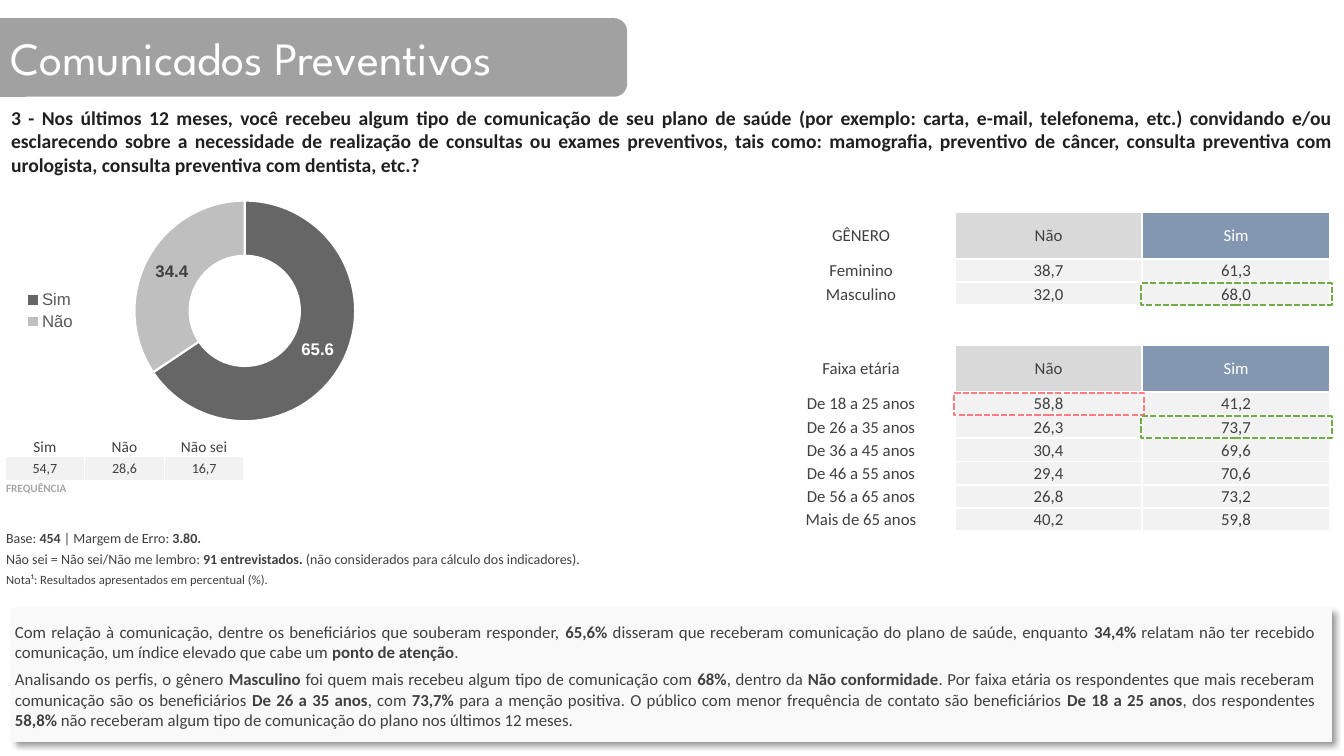
from itertools import accumulate
from lxml import etree
from pptx import Presentation
from pptx.chart.data import CategoryChartData
from pptx.dml.color import RGBColor
from pptx.enum.chart import XL_CHART_TYPE as ChartType, XL_LEGEND_POSITION as LegendPosition
from pptx.enum.dml import MSO_LINE as Dash
from pptx.enum.shapes import MSO_SHAPE as Shape
from pptx.enum.text import MSO_ANCHOR as Anchor, MSO_AUTO_SIZE as AutoSize, PP_ALIGN as Align
from pptx.oxml import parse_xml
from pptx.oxml.ns import nsdecls, qn
from pptx.util import Inches, Pt

WIDTH, HEIGHT = 13.33, 7.5
INK, WHITE, PALE, GREEN, RED = "404040", "FFFFFF", "F2F2F2", "70AD47", "FF7C80"
TITLE = "Comunicados Preventivos"
QUESTION = (
    "**3 - Nos últimos 12 meses, você recebeu algum tipo de comunicação de seu plano de saúde "
    "(por exemplo: carta, e-mail, telefonema, etc.) convidando e/ou esclarecendo sobre a necessidade "
    "de realização de consultas ou exames preventivos, tais como: mamografia, preventivo de câncer, "
    "consulta preventiva com urologista, consulta preventiva com dentista, etc.?**"
)
ANSWERS = [("Sim", 65.6, "666666", WHITE), ("Não", 34.4, "BFBFBF", INK)]
FREQUENCY = [["Sim", "Não", "Não sei"], ["54,7", "28,6", "16,7"], ["**FREQUÊNCIA**"]]
NOTES = [
    ["Base: **454** | Margem de Erro: **3.80.**"],
    ["Não sei = Não sei/Não me lembro: **91 entrevistados.** (não considerados para cálculo dos indicadores)."],
    ["Nota¹: Resultados apresentados em percentual (%)."],
]
PROFILES = [
    ["GÊNERO", "Não", "Sim"],
    ["Feminino", "38,7", "61,3"],
    ["Masculino", "32,0", "68,0"],
    [""],
    ["Faixa etária", "Não", "Sim"],
    ["De 18 a 25 anos", "58,8", "41,2"],
    ["De 26 a 35 anos", "26,3", "73,7"],
    ["De 36 a 45 anos", "30,4", "69,6"],
    ["De 46 a 55 anos", "29,4", "70,6"],
    ["De 56 a 65 anos", "26,8", "73,2"],
    ["Mais de 65 anos", "40,2", "59,8"],
]
HIGHLIGHTS = [(2, 2, GREEN), (5, 1, RED), (6, 2, GREEN)]
ANALYSIS = [
    "Com relação à comunicação, dentre os beneficiários que souberam responder, **65,6%** disseram que "
    "receberam comunicação do plano de saúde, enquanto **34,4%** relatam não ter recebido comunicação, "
    "um índice elevado que cabe um **ponto de atenção**.",
    "Analisando os perfis, o gênero **Masculino **foi quem mais recebeu algum tipo de comunicação com "
    "**68%**, dentro da **Não conformidade**. Por faixa etária os respondentes que mais receberam "
    "comunicação são os beneficiários **De 26 a 35 anos**, com **73,7% **para a menção positiva. "
    "O público com menor frequência de contato são beneficiários **De 18 a 25 anos**, dos respondentes "
    "**58,8% **não receberam algum tipo de comunicação do plano nos últimos 12 meses.",
]

deck = Presentation()
deck.slide_width, deck.slide_height = Inches(WIDTH), Inches(HEIGHT)
slide = deck.slides.add_slide(deck.slide_layouts[5])
shapes = slide.shapes


def rgb(code):
    return RGBColor.from_string(code)


def box(*lengths):
    return [Inches(length) for length in lengths]


def style(font, size, color, bold=False, face="Calibri"):
    font.size, font.bold, font.name = Pt(size), bold, face
    font.color.rgb = rgb(color)


def write(paragraph, marked, size, color=INK, align=Align.LEFT):
    paragraph.alignment = align
    for index, piece in enumerate(marked.split("**")):
        if piece:
            run = paragraph.add_run()
            run.text = piece
            style(run.font, size, color, index % 2 == 1)


def add_panel(kind, place, fill=None, line=None):
    panel = shapes.add_shape(kind, *box(*place))
    panel.shadow.inherit = False
    if fill:
        panel.fill.solid()
        panel.fill.fore_color.rgb = rgb(fill)
    else:
        panel.fill.background()
    if line:
        panel.line.color.rgb = rgb(line)
        panel.line.width, panel.line.dash_style = Pt(1.5), Dash.SQUARE_DOT
    else:
        panel.line.fill.background()
    return panel


def add_text(place, paragraphs, size, color, insets=(0.1, 0.05)):
    frame = shapes.add_textbox(*box(*place)).text_frame
    frame.word_wrap = True
    frame.margin_left = frame.margin_right = Inches(insets[0])
    frame.margin_top = frame.margin_bottom = Inches(insets[1])
    for index, marked in enumerate(paragraphs):
        paragraph = frame.add_paragraph() if index else frame.paragraphs[0]
        if index:
            paragraph.space_before = Pt(5)
        write(paragraph, marked, size, color, Align.JUSTIFY)


def add_grid(left, top, column, heights, rows, look, border):
    columns = max(map(len, rows))
    table = shapes.add_table(len(rows), columns, *box(left, top, column * columns, sum(heights))).table
    table.first_row = table.horz_banding = False
    for col in table.columns:
        col.width = Inches(column)
    for r, (height, texts) in enumerate(zip(heights, rows)):
        table.rows[r].height = Inches(height)
        for c in range(columns):
            cell = table.cell(r, c)
            size, color, fill, align, anchor = look(r, c)
            cell.margin_left = cell.margin_right = cell.margin_top = Inches(0.01)
            cell.margin_bottom = 0
            cell.vertical_anchor = anchor
            properties = cell._tc.get_or_add_tcPr()
            for side in ("a:lnL", "a:lnR", "a:lnT", "a:lnB"):
                edge = etree.SubElement(properties, qn(side), w=str(Pt(border)))
                paint = etree.SubElement(edge, qn("a:solidFill"))
                etree.SubElement(paint, qn("a:srgbClr"), val=WHITE)
            if fill:
                cell.fill.solid()
                cell.fill.fore_color.rgb = rgb(fill)
            else:
                cell.fill.background()
            if c < len(texts):
                write(cell.text_frame.paragraphs[0], texts[c], size, color, align)
        if len(texts) < columns:
            table.cell(r, 0).merge(table.cell(r, columns - 1))


def frequency_look(r, c):
    return [
        (11, INK, None, Align.CENTER, Anchor.BOTTOM),
        (10, INK, PALE, Align.CENTER, Anchor.MIDDLE),
        (8, "A6A6A6", None, Align.LEFT, Anchor.TOP),
    ][r]


def notes_look(r, c):
    return 9 if r == 2 else 10, INK, None, Align.LEFT, Anchor.TOP


def profiles_look(r, c):
    heading = PROFILES[r][-1] == "Sim"
    fill = (None, "D9D9D9", "8497B0")[c] if heading else PALE if c and PROFILES[r][0] else None
    return 12, WHITE if heading and c == 2 else INK, fill, Align.CENTER, Anchor.MIDDLE


def add_answers_chart(place):
    data = CategoryChartData(number_format="0.0")
    data.categories = [answer for answer, *_ in ANSWERS]
    data.add_series("Series 1", [share for _, share, *_ in ANSWERS])
    chart = shapes.add_chart(ChartType.DOUGHNUT, *box(*place), data).chart
    style(chart.font, 10, "000000", face="Arial")
    chart.has_title = False
    chart.has_legend = True
    chart.legend.position = LegendPosition.LEFT
    chart.legend.include_in_layout = False
    style(chart.legend.font, 12, "595959", face="Arial")
    plot = chart.plots[0]
    plot.vary_by_categories = True
    series = plot.series[0]
    labels = series.data_labels
    labels.show_value, labels.show_percentage = True, False
    labels.number_format, labels.number_format_is_linked = "0.0", False
    style(labels.font, 12, WHITE, True, "Arial")
    for index, (_, _, fill, ink) in enumerate(ANSWERS):
        point = series.points[index]
        point.format.fill.solid()
        point.format.fill.fore_color.rgb = rgb(fill)
        point.format.line.color.rgb = rgb(WHITE)
        point.format.line.width = Pt(1.5)
        if ink != WHITE:
            style(point.data_label.font, 12, ink, True, "Arial")
    area = chart._chartSpace.chart.plotArea
    for old in area.findall(qn("c:layout")):
        area.remove(old)
    layout = etree.Element(qn("c:layout"))
    manual = etree.SubElement(layout, qn("c:manualLayout"))
    settings = dict(layoutTarget="inner", xMode="edge", yMode="edge", x="0.3", y="0.06", w="0.55", h="0.88")
    for key, value in settings.items():
        etree.SubElement(manual, qn(f"c:{key}"), val=value)
    area.insert(0, layout)


band = add_panel(Shape.ROUNDED_RECTANGLE, (-0.27, 0.18, 6.49, 0.78), "A1A1A1")
title = shapes.title
band._element.addnext(title._element)
title.left, title.top, title.width, title.height = box(0, 0.18, 6.11, 0.78)
title.text_frame.text = TITLE
title.text_frame.auto_size = AutoSize.NONE
title.text_frame.vertical_anchor = Anchor.MIDDLE
heading = title.text_frame.paragraphs[0]
heading.alignment = Align.LEFT
style(heading.runs[0].font, 33, WHITE, face="League Spartan")

add_text((0, 0.99, WIDTH, 0.82), [QUESTION], 14, "202020", (0.11, 0.06))
add_grid(0.05, 5.25, 6.54, [0.21] * 3, NOTES, notes_look, 1)

card = add_panel(Shape.RECTANGLE, (0.12, 6.03, 13.09, 1.33), "F9F9F9")
effects = parse_xml(
    f'<a:effectLst {nsdecls("a")}><a:outerShdw blurRad="{Pt(4)}" dist="{Pt(3)}" dir="2700000">'
    '<a:srgbClr val="000000"><a:alpha val="40000"/></a:srgbClr></a:outerShdw></a:effectLst>'
)
plain = card._element.spPr.find(qn("a:effectLst"))
plain.getparent().replace(plain, effects)
add_text((0.05, 6.12, 13.09, 1.18), ANALYSIS, 12, INK)

add_grid(0.05, 4.33, 0.79, [0.2, 0.24, 0.24], FREQUENCY, frequency_look, 1)
left, top, column = 7.61, 2.1, 1.86
heights = [0.47 if row[-1] == "Sim" else 0.23 if row[0] else 0.39 for row in PROFILES]
add_grid(left, top, column, heights, PROFILES, profiles_look, 1.5)
tops = list(accumulate(heights, initial=top))
for row, col, color in HIGHLIGHTS:
    add_panel(Shape.RECTANGLE, (left + col * column - 0.01, tops[row] + 0.01, column + 0.03, 0.22), line=color)
add_answers_chart((0.14, 1.84, 3.98, 2.49))

deck.save("out.pptx")
